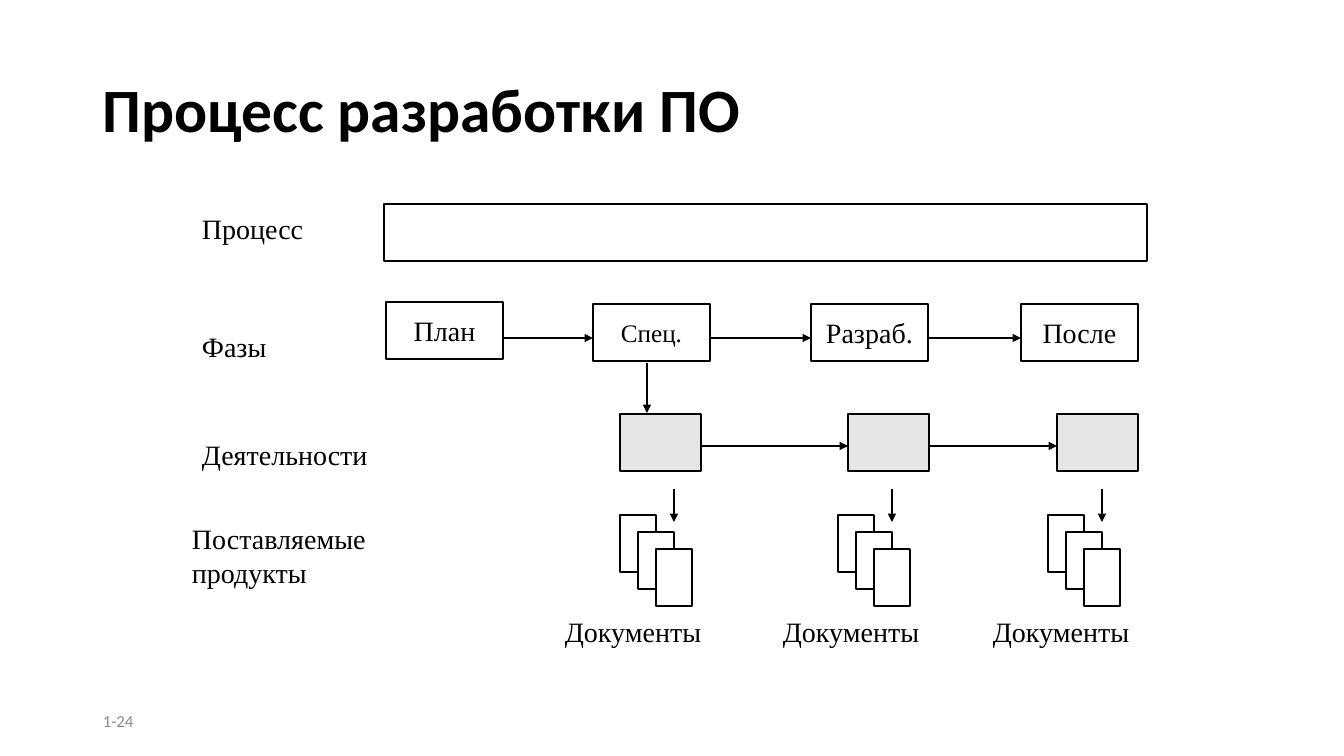
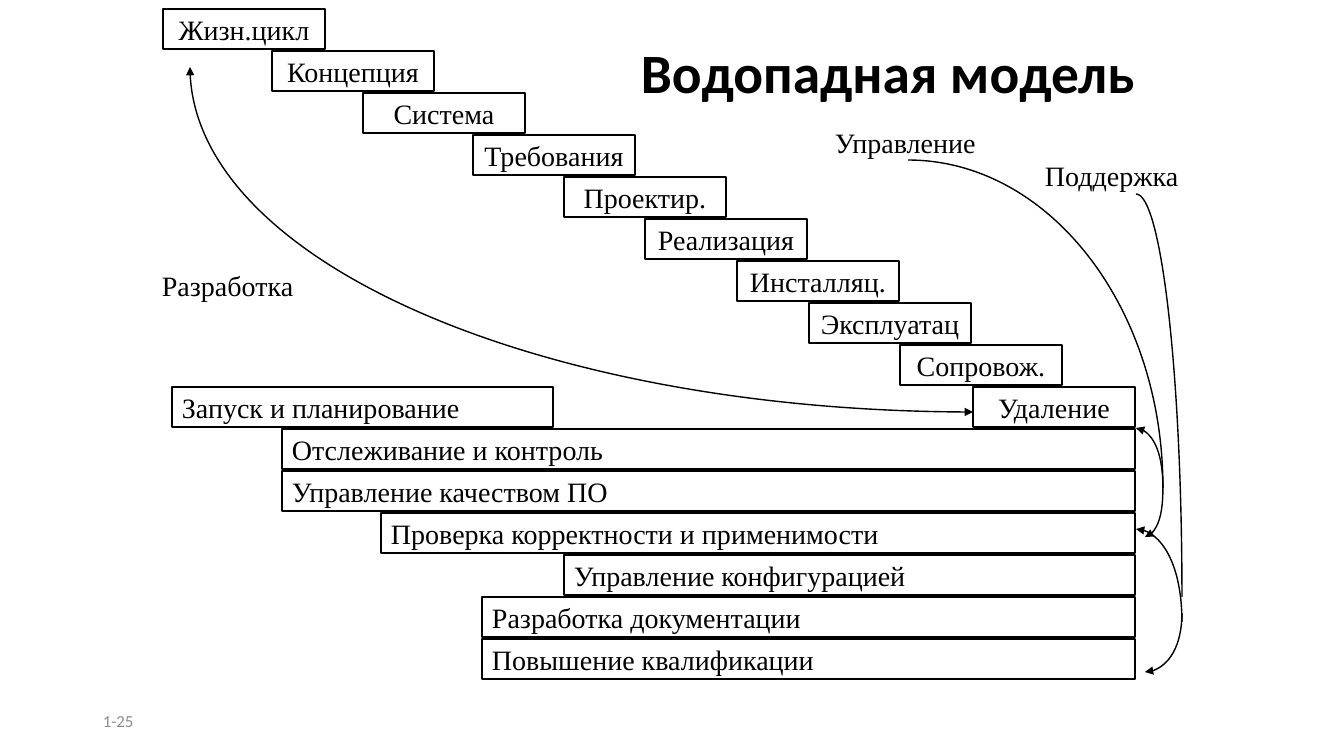
import pptx
import pptx.util
import pptx.dml.color
import pptx.enum.shapes
import pptx.enum.text
import pptx.oxml
import pptx.oxml.ns
import lxml.etree

RGBColor = pptx.dml.color.RGBColor
SHAPES = pptx.enum.shapes.MSO_SHAPE
ALIGN = pptx.enum.text.PP_ALIGN
ANCHOR = pptx.enum.text.MSO_ANCHOR
qn = pptx.oxml.ns.qn

BLACK = RGBColor(0x00, 0x00, 0x00)
WHITE = RGBColor(0xFF, 0xFF, 0xFF)
LIGHT_GREY = RGBColor(0xE7, 0xE6, 0xE6)
FOOTER_GREY = RGBColor(0x8C, 0x8C, 0x8C)

EMU_PER_PX = 914400 / 100.8
SLIDE_W, SLIDE_H = 1344, 756
LABEL_H = 43
KAPPA = 0.5523  # control point ratio of a quarter ellipse

TITLE = {"name": "Calibri", "size": 44, "bold": True, "color": BLACK}
FOOTER = {"name": "Calibri", "size": 12, "color": FOOTER_GREY}
BODY = {"name": "Times New Roman", "size": 20, "color": BLACK}

# Process slide: rows and columns
PHASE_W, PHASE_H = 117, 57
PHASES = [("План", 386, 302, 20), ("Спец.", 593, 304, 18),
          ("Разраб.", 811, 304, 20), ("После", 1021, 304, 20)]
ROW_LABELS = [("Процесс", 192, 207, 125), ("Фазы", 192, 325, 85),
              ("Деятельности", 192, 433, 187),
              ("Поставляемые\nпродукты", 182, 517, 196)]
ACTIVITY_XS = [620, 848, 1057]
ACTIVITY_W = 81
DOCUMENT_XS = [620, 838, 1048]

# Waterfall slide: every row is one pitch below the last
ROW_TOP, ROW_PITCH, ROW_H = 9, 42, 40
STEP_W, BARS_RIGHT = 162, 1135
STEPS = [("Жизн.цикл", 163), ("Концепция", 272), ("Система", 363),
         ("Требования", 473), ("Проектир.", 564), ("Реализация", 645),
         ("Инсталляц.", 737), ("Эксплуатац", 809), ("Сопровож.", 900),
         ("Удаление", 973)]
BARS = [("Запуск и планирование", 172, 553),
        ("Отслеживание и контроль", 282, BARS_RIGHT),
        ("Управление качеством ПО", 282, BARS_RIGHT),
        ("Проверка корректности и применимости", 381, BARS_RIGHT),
        ("Управление конфигурацией", 564, BARS_RIGHT),
        ("Разработка документации", 482, BARS_RIGHT),
        ("Повышение квалификации", 482, BARS_RIGHT)]
GROUP_LABELS = [("Разработка", 152, 264, 177), ("Управление", 825, 121, 163),
                ("Поддержка", 1035, 154, 154)]
# Start (horizontal tangent), end (vertical tangent), arrowheads
ARCS = [((1136, 529), (1182, 622), ("head",)),
        ((1145, 672), (1182, 613), ("head",)),
        ((1136, 428), (1163, 488), ("head",)),
        ((1145, 537), (1163, 487), ("head",)),
        ((973, 412), (190, 67), ("head", "tail")),
        ((908, 160), (1163, 488), ()),
        ((1136, 194), (1182, 597), ())]


def px(*values):
    return [pptx.util.Emu(round(v * EMU_PER_PX)) for v in values]


def write(sp, text, style, align=ALIGN.LEFT, anchor=ANCHOR.MIDDLE,
          wrap=False, spacing=None):
    tf = sp.text_frame
    tf.word_wrap = wrap
    tf.vertical_anchor = anchor
    for i, line in enumerate(text.split("\n")):
        p = tf.add_paragraph() if i else tf.paragraphs[0]
        p.alignment = align
        if spacing:
            p.line_spacing = spacing
        r = p.add_run()
        r.text = line
        for key, value in style.items():
            if key == "color":
                r.font.color.rgb = value
            else:
                setattr(r.font, key,
                        pptx.util.Pt(value) if key == "size" else value)


def add_text(parent, text, x, y, w, h, style=BODY, **options):
    sp = parent.add_textbox(*px(x, y, w, h))
    write(sp, text, style, **options)


def add_label(parent, text, x, y, w):
    h = LABEL_H + 35 * text.count("\n")
    add_text(parent, text, x, y, w, h, anchor=ANCHOR.TOP)


def add_box(parent, x, y, w, h, text="", fill=WHITE, style=BODY,
            align=ALIGN.CENTER):
    sp = parent.add_shape(SHAPES.RECTANGLE, *px(x, y, w, h))
    sp.shadow.inherit = False
    sp.fill.solid()
    sp.fill.fore_color.rgb = fill
    outline(sp)
    if text:
        write(sp, text, style, align)


def outline(sp, ends=()):
    sp.line.color.rgb = BLACK
    sp.line.width = pptx.util.Pt(1)
    ln = sp.line._get_or_add_ln()
    for end in ends:
        lxml.etree.SubElement(ln, qn(f"a:{end}End"), type="triangle")


def add_arrow(parent, x1, y1, x2, y2):
    cxn = parent.add_connector(pptx.enum.shapes.MSO_CONNECTOR.STRAIGHT,
                               *px(x1, y1, x2, y2))
    outline(cxn, ["tail"])
    lxml.etree.SubElement(cxn._element.spPr, qn("a:effectLst"))


def add_arc(parent, start, end, ends):
    (x1, y1), (x2, y2) = start, end
    controls = [(x1 + KAPPA * (x2 - x1), y1), (x2, y2 - KAPPA * (y2 - y1))]
    builder = parent.build_freeform(*px(x1, y1))
    builder.add_line_segments([px(*pt) for pt in controls + [end]],
                              close=False)
    sp = builder.convert_to_shape()
    sp.shadow.inherit = False
    sp.fill.background()
    outline(sp, ends)
    # Turn the three segments into one Bézier curve
    segments = list(sp._element.spPr.iter(qn("a:lnTo")))
    curve = lxml.etree.SubElement(segments[0].getparent(),
                                  qn("a:cubicBezTo"))
    for segment in segments:
        curve.append(segment[0])
        segment.getparent().remove(segment)


def add_documents(parent, x):
    group = parent.add_group_shape().shapes
    add_label(group, "Документы", x - 65, 610, 157)
    add_arrow(group, x + 54, 489, x + 54, 522)
    for i in range(3):
        add_box(group, x + 18 * i, 515 + 17 * i, 36, 57)


def new_slide(prs, title, number, title_box, title_size=44):
    shapes = prs.slides.add_slide(prs.slide_layouts[6]).shapes
    add_text(shapes, number, 93, 701, 302, 40, FOOTER, wrap=True)
    add_text(shapes, title, *title_box, {**TITLE, "size": title_size},
             wrap=True, spacing=0.9)
    return shapes


def process_slide(prs):
    shapes = new_slide(prs, "Процесс разработки ПО", "1-24",
                       (93, 40, 1159, 146))
    for label in ROW_LABELS:
        add_label(shapes, *label)
    add_box(shapes, 384, 204, 763, 57)
    # Phases
    for text, x, y, size in PHASES:
        add_box(shapes, x, y, PHASE_W, PHASE_H, text,
                style={**BODY, "size": size})
    for left, right in zip(PHASES, PHASES[1:]):
        add_arrow(shapes, left[1] + PHASE_W, 338, right[1], 338)
    # Activities
    for x in ACTIVITY_XS:
        add_box(shapes, x, 414, ACTIVITY_W, 57, fill=LIGHT_GREY)
    add_arrow(shapes, 647, 363, 647, 413)
    for left, right in zip(ACTIVITY_XS, ACTIVITY_XS[1:]):
        add_arrow(shapes, left + ACTIVITY_W, 446, right, 446)
    # Deliverables
    for x in DOCUMENT_XS:
        add_documents(shapes, x)


def waterfall_slide(prs):
    shapes = new_slide(prs, "Водопадная модель", "1-25",
                       (631, 42, 554, 68), 39.6)
    # Life cycle steps
    for i, (text, x) in enumerate(STEPS):
        add_box(shapes, x, ROW_TOP + ROW_PITCH * i, STEP_W, ROW_H, text)
    # Supporting activities start on the row of the last step
    for i, (text, x, right) in enumerate(BARS, len(STEPS) - 1):
        add_box(shapes, x, ROW_TOP + ROW_PITCH * i, right - x, ROW_H, text,
                align=ALIGN.LEFT)
    # Group names and brackets
    for label in GROUP_LABELS:
        add_label(shapes, *label)
    for arc in ARCS:
        add_arc(shapes, *arc)


def main():
    prs = pptx.Presentation()
    prs.slide_width, prs.slide_height = px(SLIDE_W, SLIDE_H)
    process_slide(prs)
    waterfall_slide(prs)
    prs.save("out.pptx")


if __name__ == "__main__":
    main()
